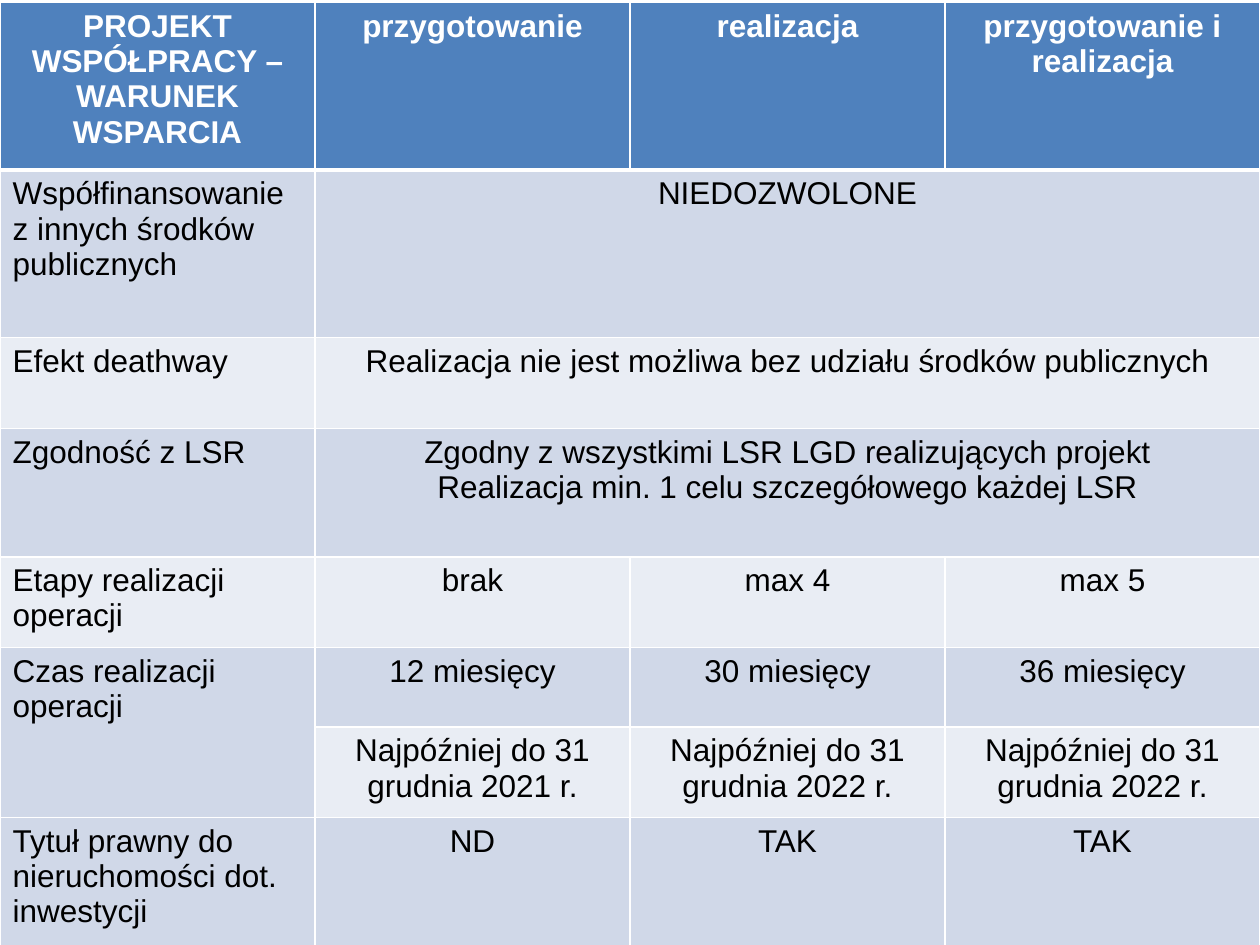
from dataclasses import dataclass

from lxml import etree
from pptx import Presentation
from pptx.dml.color import RGBColor
from pptx.enum.text import PP_ALIGN
from pptx.oxml.ns import qn
from pptx.util import Inches, Pt

CENTER = PP_ALIGN.CENTER
LEFT = PP_ALIGN.LEFT
BLANK_LAYOUT = 6


@dataclass(frozen=True)
class Theme:
    font: str = "Arial"
    size: int = 18
    header_fill: str = "4F81BD"
    header_text: str = "FFFFFF"
    body_text: str = "000000"
    odd_fill: str = "D0D8E8"
    even_fill: str = "E9EDF4"
    border: str = "FFFFFF"
    thin: int = 1
    thick: int = 3


THEME = Theme()
ROW_HEIGHTS = [1.33, 1.33, 0.72, 1.02, 0.72, 0.63, 0.72, 1.02]
ROWS = [
    ["PROJEKT WSPÓŁPRACY – WARUNEK WSPARCIA", "przygotowanie", "realizacja", "przygotowanie i realizacja"],
    ["Współfinansowanie z innych środków publicznych", "NIEDOZWOLONE"],
    ["Efekt deathway", "Realizacja nie jest możliwa bez udziału środków publicznych"],
    ["Zgodność z LSR",
     "Zgodny z wszystkimi LSR LGD realizujących projekt\nRealizacja min. 1 celu szczegółowego każdej LSR"],
    ["Etapy realizacji operacji", "brak", "max 4", "max 5"],
    ["Czas realizacji operacji", "12 miesięcy", "30 miesięcy", "36 miesięcy"],
    ["", *(f"Najpóźniej do 31 grudnia {year} r." for year in (2021, 2022, 2022))],
    ["Tytuł prawny do nieruchomości dot. inwestycji", "ND", "TAK", "TAK"],
]
COLUMN_COUNT = len(ROWS[0])
DEADLINE_ROW = 6


def set_border(cell, side, width):
    properties = cell._tc.get_or_add_tcPr()
    line = etree.SubElement(properties, qn(f"a:ln{side}"), w=str(Pt(width)))
    fill = etree.SubElement(line, qn("a:solidFill"))
    etree.SubElement(fill, qn("a:srgbClr"), val=THEME.border)


def style_cell(cell, row, column):
    is_header = row == 0
    set_border(cell, "L", THEME.thin)
    set_border(cell, "R", THEME.thin)
    set_border(cell, "T", THEME.thick if row == 1 else THEME.thin)
    set_border(cell, "B", THEME.thick if is_header else THEME.thin)

    band_fill = THEME.odd_fill if row % 2 else THEME.even_fill
    cell.fill.solid()
    cell.fill.fore_color.rgb = RGBColor.from_string(THEME.header_fill if is_header else band_fill)

    text_color = THEME.header_text if is_header else THEME.body_text
    for paragraph in cell.text_frame.paragraphs:
        paragraph.alignment = CENTER if is_header or column else LEFT
        font = paragraph.font
        for run in paragraph.runs:
            font = run.font
            font.name = THEME.font
            font.size = Pt(THEME.size)
            font.bold = is_header
            font.color.rgb = RGBColor.from_string(text_color)


def add_conditions_table(slide, left, top, width, height):
    table = slide.shapes.add_table(len(ROWS), COLUMN_COUNT, left, top, width, height).table
    for column in table.columns:
        column.width = width // COLUMN_COUNT
    for row, row_height in zip(table.rows, ROW_HEIGHTS):
        row.height = Inches(row_height)

    for row, texts in enumerate(ROWS):
        for column in range(COLUMN_COUNT):
            cell = table.cell(row, column)
            if column < len(texts):
                cell.text_frame.text = texts[column]
            style_cell(cell, row, column)
        if len(texts) < COLUMN_COUNT:
            table.cell(row, 1).merge(table.cell(row, COLUMN_COUNT - 1))
    table.cell(DEADLINE_ROW - 1, 0).merge(table.cell(DEADLINE_ROW, 0))


def main():
    presentation = Presentation()
    presentation.slide_width = Inches(10)
    presentation.slide_height = Inches(7.5)
    slide = presentation.slides.add_slide(presentation.slide_layouts[BLANK_LAYOUT])
    add_conditions_table(slide, Inches(0), Inches(0.02), Inches(10), Inches(7.48))
    presentation.save("out.pptx")


if __name__ == "__main__":
    main()
